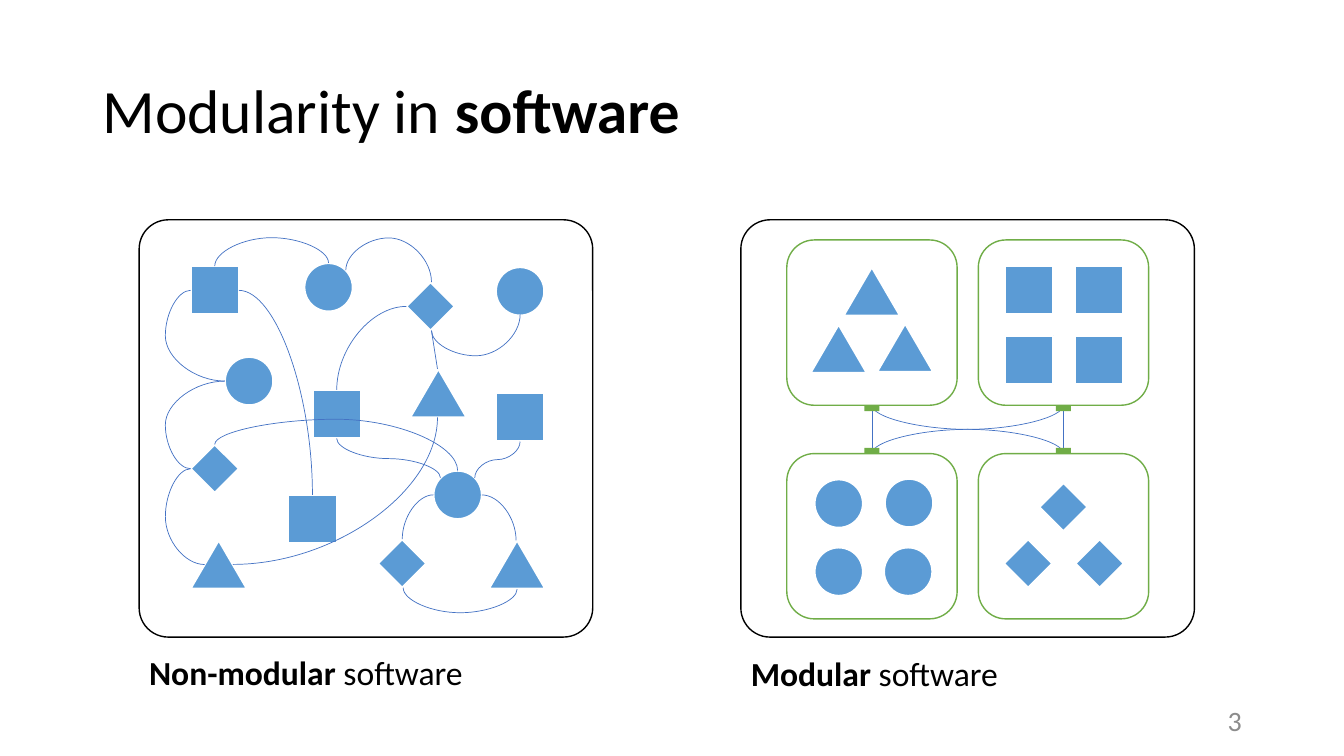
import math
import pptx
import pptx.util
import pptx.dml.color
import pptx.enum.shapes
import pptx.enum.text
import pptx.oxml.ns
import lxml.etree

Pt = pptx.util.Pt
rgb = pptx.dml.color.RGBColor.from_string
qn = pptx.oxml.ns.qn
MSO = pptx.enum.shapes.MSO_SHAPE
LINK = pptx.enum.shapes.MSO_CONNECTOR
ANCHOR = pptx.enum.text.MSO_ANCHOR
ALIGN = pptx.enum.text.PP_ALIGN

prs = pptx.Presentation()
prs.slide_width, prs.slide_height = Pt(960), Pt(540)
s = prs.slides.add_slide(prs.slide_layouts[6])


def add_box(kind, x, y, w, h, fill, line=None, weight=1):
    sp = s.shapes.add_shape(kind, Pt(x), Pt(y), Pt(w), Pt(h))
    sp.shadow.inherit = False
    sp.fill.solid()
    sp.fill.fore_color.rgb = rgb(fill)
    if line:
        sp.line.color.rgb = rgb(line)
        sp.line.width = Pt(weight)
    else:
        sp.line.fill.background()
    return sp


def add_text(x, y, w, h, runs, size, color="000000", anchor=ANCHOR.TOP, wrap=True):
    sp = s.shapes.add_textbox(Pt(x), Pt(y), Pt(w), Pt(h))
    tf = sp.text_frame
    tf.word_wrap = wrap
    tf.vertical_anchor = anchor
    p = tf.paragraphs[0]
    for text, bold in runs:
        r = p.add_run()
        r.text = text
        r.font.name = "Calibri"
        r.font.size = Pt(size)
        r.font.bold = bold
        r.font.color.rgb = rgb(color)
    return p


p = add_text(66.2, 28.8, 828, 104.4, [("Modularity in ", False), ("software", True)], 44,
             anchor=ANCHOR.MIDDLE)
p.line_spacing = 0.9

for x in (99.4, 529.2):
    sp = add_box(MSO.ROUNDED_RECTANGLE, x, 157, 324, 298.1, "FFFFFF", "000000")
    sp.adjustments[0] = 0.07

port_xs = (622.8, 759.6)
for x in port_xs:
    for y in (171.4, 324):
        add_box(MSO.ROUNDED_RECTANGLE, x - 60.8, y, 121.7, 118.1, "FFFFFF", "70AD47")

icons = [
    (MSO.OVAL, 34.6, [(160.6, 254.9), (309.6, 336.2), (217.4, 187.9), (354.2, 190.8),
                      (581.8, 342.4), (632, 342), (581.8, 391), (631.4, 391)]),
    (MSO.ISOSCELES_TRIANGLE, 40.3, [(349.2, 385.9), (293, 263.5), (136.1, 385.9),
                                    (578.9, 231.8), (626.4, 231.1), (602.6, 190.8)]),
    (MSO.RECTANGLE, 34.6, [(136.1, 190.1), (205.9, 353.5), (223.2, 278.6), (354.2, 280.8),
                           (717.8, 190.1), (767.5, 190.1), (717.8, 239.8), (767.5, 239.8)]),
    (MSO.DIAMOND, 34.6, [(136.1, 317.5), (270, 385.2), (290.2, 201.6),
                         (742.3, 344.9), (717.1, 385.2), (768.2, 385.2)]),
]
for kind, width, places in icons:
    for x, y in places:
        add_box(kind, x, y, width, 34.6, "5B9BD5", "FFFFFF", 1.5)

straight_links = [
    (308.2, 236.2, 312.5, 263.5),
    (622.8, 324, 622.8, 289.4),
    (759.6, 289.4, 759.6, 324),
]
curved_links = [
    (136.1, 207.4, 160.6, 272.2, 180, 118.1),
    (170.6, 207.4, 223.2, 353.5, 0, None),
    (153.4, 190.1, 234.7, 187.9, 90, 169.9),
    (326.9, 336.2, 153.4, 317.5, 270, 299.5),
    (136.1, 334.8, 146.2, 403.2, 180, 118.1),
    (136.1, 334.8, 160.6, 272.2, 180, 118.1),
    (308.2, 201.6, 247, 193, 270, 169.9),
    (290.2, 218.9, 240.5, 278.6, 180, None),
    (308.2, 236.2, 371.5, 224.6, 90, 254.2),
    (371.5, 315.4, 339.1, 341.3, 90, 328.3),
    (314.6, 341.3, 240.5, 313.2, 270, 327.6),
    (288, 419.8, 369.4, 420.8, 270, 437.8),
    (287.3, 385.2, 309.6, 353.5, 90, None),
    (344.2, 353.5, 368.6, 385.9, 0, None),
    (312.5, 298.1, 166.3, 403.2, 90, None),
    (759.6, 324, 622.8, 289.4, 270, 306.7),
    (622.8, 324, 759.6, 289.4, 90, 306.7),
]
for x1, y1, x2, y2, *bend in straight_links + curved_links:
    kind = LINK.CURVE if bend else LINK.STRAIGHT
    sp = s.shapes.add_connector(kind, Pt(x1), Pt(y1), Pt(x2), Pt(y2))
    sp.line.color.rgb = rgb("4472C4")
    sp.line.width = Pt(0.5)
    spPr = sp._element.spPr
    lxml.etree.SubElement(spPr, qn("a:effectLst"))
    if not bend:
        continue
    turn, reach = bend
    cos, sin = round(math.cos(math.radians(turn))), round(math.sin(math.radians(turn)))
    dx, dy = x2 - x1, y2 - y1
    along, across = dx * cos + dy * sin, dy * cos - dx * sin
    w, h = abs(along), abs(across)
    sp.left, sp.top = Pt((x1 + x2 - w) / 2), Pt((y1 + y2 - h) / 2)
    sp.width, sp.height = Pt(w), Pt(h)
    xfrm = spPr.find(qn("a:xfrm"))
    xfrm.set("rot", str(turn * 60000))
    xfrm.set("flipH", str(int(along < 0)))
    xfrm.set("flipV", str(int(across < 0)))
    geom = spPr.find(qn("a:prstGeom"))
    if reach is None:
        geom.set("prst", "curvedConnector2")
    else:
        ratio = (reach - y1) / dy if sin else (reach - x1) / dx
        gd = lxml.etree.SubElement(geom.find(qn("a:avLst")), qn("a:gd"))
        gd.set("name", "adj1")
        gd.set("fmla", f"val {round(ratio * 100000)}")

for x in port_xs:
    for y in (289.4, 320):
        add_box(MSO.RECTANGLE, x - 5.4, y, 10.8, 4.3, "70AD47")

captions = [("Non-modular", 99.4, 462.2, 238.3), ("Modular", 529.2, 463, 191.5)]
for label, x, y, w in captions:
    add_text(x, y, w, 36, [(label, True), (" software", False)], 24, wrap=False)

p = add_text(678.2, 500.4, 216, 28.8, [("3", False)], 20, "8C8C8C", ANCHOR.MIDDLE)
p.alignment = ALIGN.RIGHT

prs.save("out.pptx")
